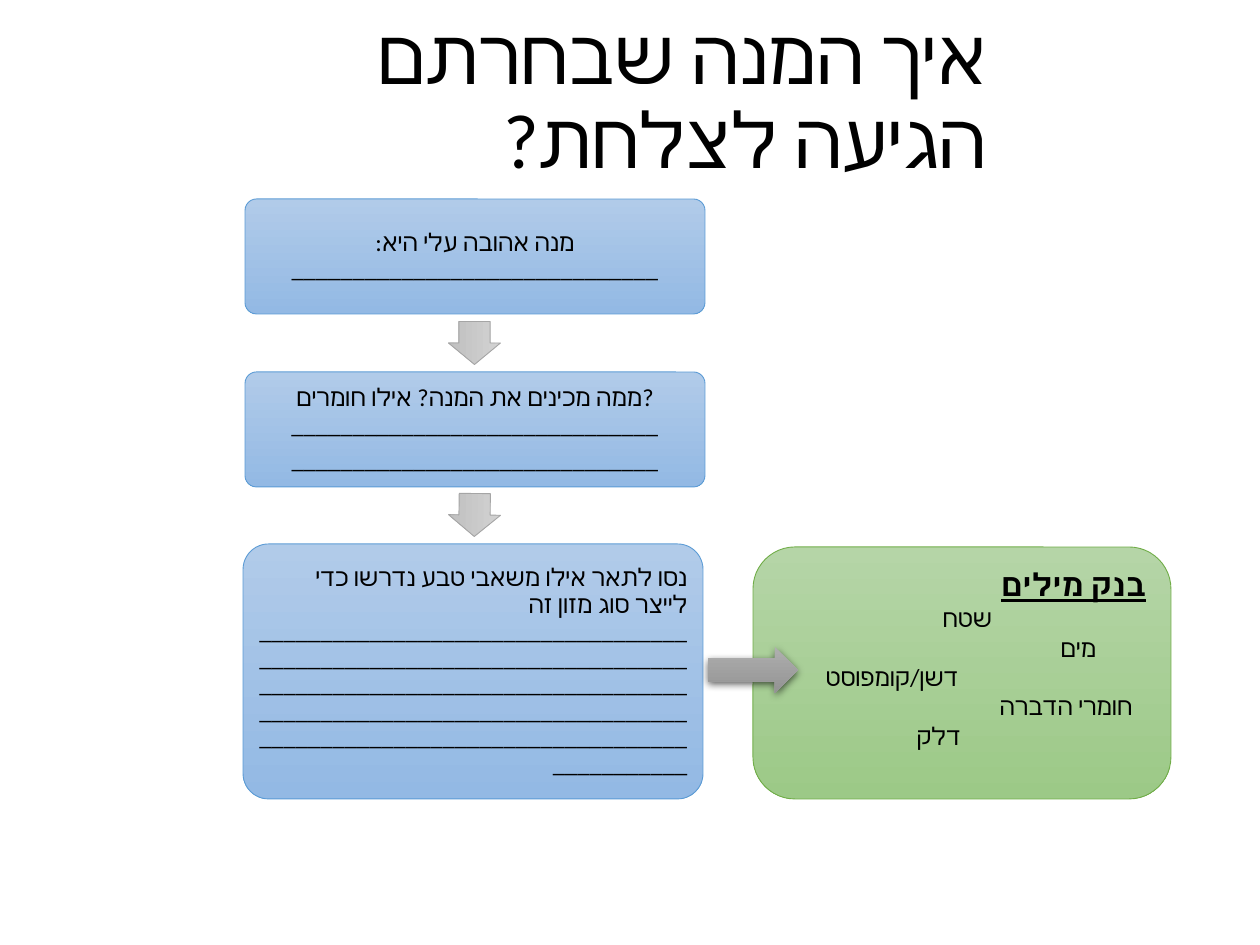
from dataclasses import dataclass
from lxml.etree import SubElement
from pptx import Presentation
from pptx.dml.color import RGBColor as RGB
from pptx.enum.shapes import MSO_SHAPE as Kind
from pptx.enum.text import MSO_ANCHOR as Anchor, PP_ALIGN as Align
from pptx.oxml import parse_xml
from pptx.oxml.ns import nsdecls, qn
from pptx.util import Pt


@dataclass
class Theme:
    font: str = "Calibri"
    ink: str = "000000"
    blue: tuple = ("B1CBE9", "93B9E4", "5B9BD5")
    green: tuple = ("B5D5A7", "9CC987", "70AD47")
    light: tuple = ("D2D2D2", "C0C0C0", "A5A5A5")
    dark: tuple = ("AFAFAF", "939393", None)
    title: int = 44
    head: int = 18
    body: int = 14


theme = Theme()
PX = 914400 / 126


def add_form(kind, box, tint):
    """Add a shape with a top-down gradient; tint is start, end and line."""
    form = slide.shapes.add_shape(kind, *[round(v * PX) for v in box])
    form.shadow.inherit = False
    form.fill.gradient()
    form.fill.gradient_angle = 270
    for stop, hue in zip(form.fill.gradient_stops, tint):
        stop.color.rgb = RGB.from_string(hue)
    if tint[2]:
        form.line.color.rgb = RGB.from_string(tint[2])
        form.line.width = Pt(0.5)
    else:
        form.line.fill.background()
    return form


def add_text(para, lines, size, align, rtl=False, bold=False):
    """Fill a paragraph with one run per line, parted by line breaks."""
    para.alignment = align
    para._p.get_or_add_pPr().set("rtl", str(int(rtl)))
    for i, line in enumerate(lines):
        if i:
            para.add_line_break()
        run = para.add_run()
        run.text = line
        font = run.font
        font.size, font.name = Pt(size), theme.font
        font.bold = font.underline = bold
        font.color.rgb = RGB.from_string(theme.ink)
        SubElement(run._r.rPr, qn("a:cs"), typeface=theme.font)


deck = Presentation()
deck.slide_width, deck.slide_height = round(1260 * PX), round(945 * PX)
slide = deck.slides.add_slide(deck.slide_layouts[5])

# Title
title = slide.shapes.title
title.left, title.top, title.width, title.height = [
    round(v * PX) for v in (147, 10, 853, 183)]
frame = title.text_frame
frame.vertical_anchor = Anchor.MIDDLE
frame.paragraphs[0].line_spacing = 0.9
add_text(frame.paragraphs[0], ["איך המנה שבחרתם", "הגיעה לצלחת?"],
         theme.title, Align.RIGHT, rtl=True)

# Steps: box, alignment, paragraphs as (lines, right to left)
blank = "_" * 30
steps = [
    ((245, 199, 460, 115), Align.CENTER,
     [(["מנה אהובה עלי היא:", blank], True)]),
    ((245, 372, 460, 115), Align.CENTER,
     [(["ממה מכינים את המנה? אילו חומרים?", blank], False),
      ([blank], True)]),
    ((243, 544, 460, 255), Align.RIGHT,
     [(["נסו לתאר אילו משאבי טבע נדרשו כדי לייצר סוג מזון זה",
        "_" * 186], False)]),
]
for box, align, paras in steps:
    step = add_form(Kind.ROUNDED_RECTANGLE, box, theme.blue)
    step.adjustments[0] = 0.1
    frame = step.text_frame
    frame.word_wrap = True
    frame.vertical_anchor = Anchor.MIDDLE
    frame.margin_left = frame.margin_right = round(8 * PX)
    frame.margin_top = frame.margin_bottom = round(8 * PX)
    for i, (lines, rtl) in enumerate(paras):
        para = frame.add_paragraph() if i else frame.paragraphs[0]
        para.line_spacing = 0.9
        para.space_after = Pt(5)
        add_text(para, lines, theme.body, align, rtl)

# Arrows between the steps
for top, turn in ((317, 90), (489, 90.6)):
    arrow = add_form(Kind.RIGHT_ARROW, (453, top, 43, 52), theme.light)
    arrow.rotation = turn
    arrow.adjustments[0] = 0.6

# Word bank: each word with its own indent
bank = add_form(Kind.ROUNDED_RECTANGLE, (753, 547, 418, 252), theme.green)
frame = bank.text_frame
frame.word_wrap = True
frame.vertical_anchor = Anchor.TOP
add_text(frame.paragraphs[0], ["בנק מילים"], theme.head, Align.RIGHT,
         rtl=True, bold=True)
words = [("שטח", 165), ("מים", 283), ("דשן/קומפוסט", 48),
         ("חומרי הדברה", 222), ("דלק", 139)]
for word, indent in words:
    para = frame.add_paragraph()
    add_text(para, [word], theme.body, Align.LEFT)
    para._p.pPr.set("marL", str(round(indent * PX)))

# Arrow to the word bank, with a soft shadow
arrow = add_form(Kind.RIGHT_ARROW, (708, 647, 90, 46), theme.dark)
props = arrow._element.spPr
props.replace(props.find(qn("a:effectLst")), parse_xml(
    f'<a:effectLst {nsdecls("a")}>'
    '<a:outerShdw blurRad="57150" dist="19050" dir="5400000" algn="ctr" rotWithShape="0">'
    '<a:srgbClr val="000000"><a:alpha val="63000"/></a:srgbClr>'
    '</a:outerShdw></a:effectLst>'))

deck.save("out.pptx")
